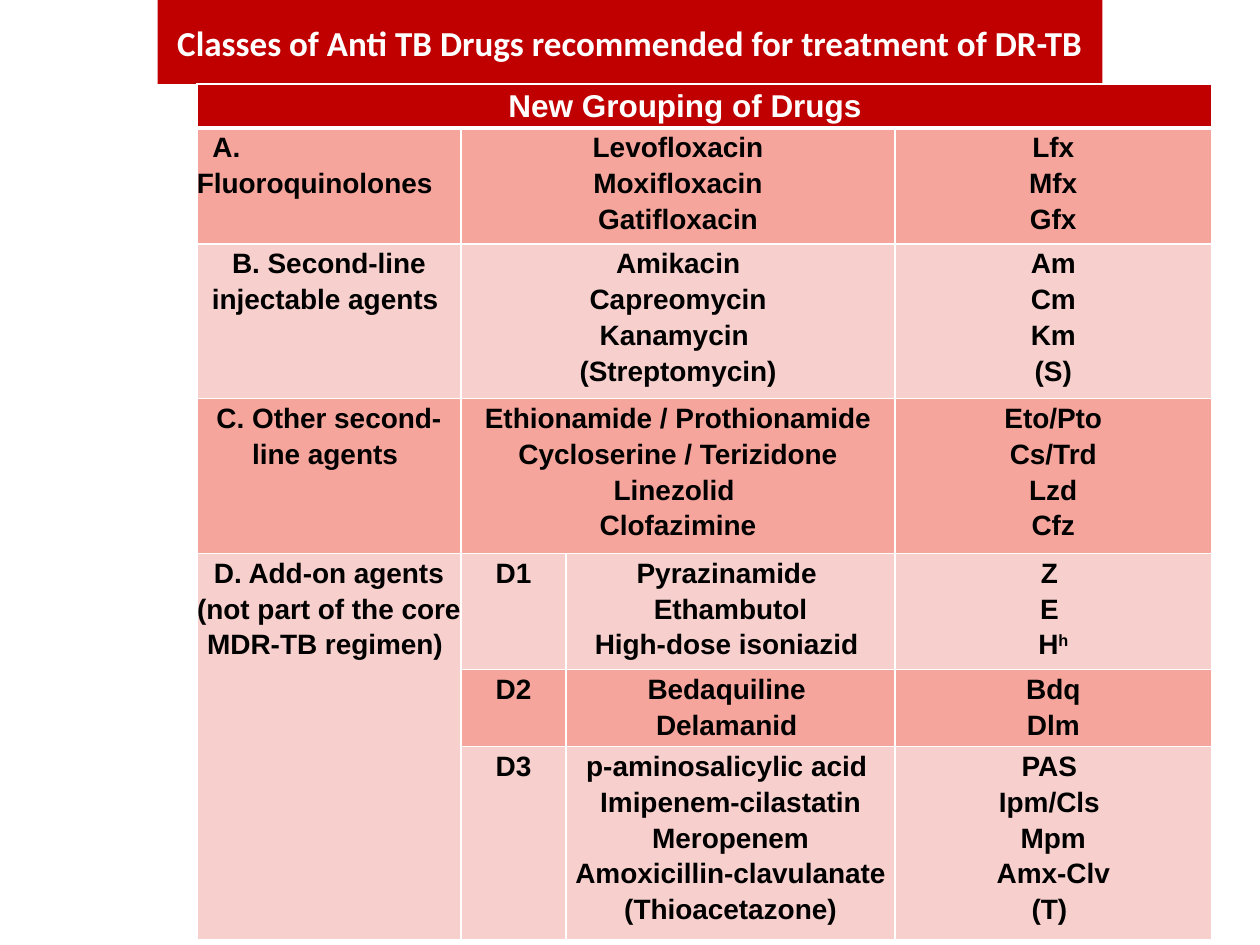
from lxml.etree import SubElement
from pptx import Presentation
from pptx.dml.color import RGBColor
from pptx.enum.text import MSO_ANCHOR, MSO_AUTO_SIZE, PP_ALIGN
from pptx.oxml.ns import qn
from pptx.util import Pt

RED, ROSE, PINK = "C00000", "F6A59C", "F7D0CD"
WHITE, BLACK = "FFFFFF", "000000"
LINE = 22.1
HEAD = 25.2
COLS = [151, 60, 188, 101]
ROWS = [
    (ROSE, 3, ["A. Fluoroquinolones"],
     ["Levofloxacin", "Moxifloxacin", "Gatifloxacin"], None,
     ["Lfx", "Mfx", "Gfx"]),
    (PINK, 4, ["B. Second-line injectable agents "],
     ["Amikacin", "Capreomycin", "Kanamycin ", "(Streptomycin)"], None,
     ["Am", "Cm", "Km", "(S)"]),
    (ROSE, 4, ["C. Other second-line agents "],
     ["Ethionamide / Prothionamide", "Cycloserine / Terizidone",
      "Linezolid ", "Clofazimine"], None,
     ["Eto/Pto", "Cs/Trd", "Lzd", "Cfz"]),
    (PINK, 3, ["D. Add-on agents (not part of the core MDR-TB regimen) "],
     ["D1"], ["Pyrazinamide ", "Ethambutol", "High-dose isoniazid "],
     ["Z ", "E ", ("H", "h")]),
    (ROSE, 2, None, ["D2"], ["Bedaquiline ", "Delamanid "], ["Bdq", "Dlm"]),
    (PINK, 5, None, ["D3"],
     ["p-aminosalicylic acid ", "Imipenem-cilastatin", "Meropenem",
      "Amoxicillin-clavulanate (Thioacetazone)"],
     ["PAS ", "Ipm/Cls ", "Mpm", "Amx-Clv", "(T) "]),
]


def paint(fill, tone):
    fill.solid()
    fill.fore_color.rgb = RGBColor.from_string(tone)


def add_run(para, text, size, tone, face="Arial"):
    run = para.add_run()
    run.text = text
    font = run.font
    font.name, font.size, font.bold = face, Pt(size), True
    font.color.rgb = RGBColor.from_string(tone)
    return run


def edge(cell, top, base):
    props = cell._tc.get_or_add_tcPr()
    for tag, width in (("L", 1), ("R", 1), ("T", top), ("B", base)):
        line = SubElement(props, qn("a:ln" + tag), w=str(Pt(width)))
        fill = SubElement(line, qn("a:solidFill"))
        SubElement(fill, qn("a:srgbClr"), val=WHITE)


def style(cell, tone, top=1, base=1):
    cell.margin_left = cell.margin_right = 0
    cell.margin_top = cell.margin_bottom = 0
    edge(cell, top, base)
    paint(cell.fill, tone)


def write(cell, lines, size=16, tone=BLACK, align=PP_ALIGN.CENTER):
    frame = cell.text_frame
    for num, line in enumerate(lines):
        para = frame.add_paragraph() if num else frame.paragraphs[0]
        para.alignment = align
        para.line_spacing = 1.15
        parts = line if isinstance(line, tuple) else (line,)
        for spot, part in enumerate(parts):
            run = add_run(para, part, size, tone)
            if spot:
                run._r.get_or_add_rPr().set("baseline", "30000")


def add_title(slide):
    title = slide.shapes.title
    title.left, title.top, title.width, title.height = Pt(90), 0, Pt(540), Pt(48)
    paint(title.fill, RED)
    frame = title.text_frame
    frame.auto_size = MSO_AUTO_SIZE.NONE
    frame.word_wrap = True
    frame.vertical_anchor = MSO_ANCHOR.MIDDLE
    para = frame.paragraphs[0]
    para.alignment = PP_ALIGN.CENTER
    add_run(para, "Classes of Anti TB Drugs recommended for treatment of DR-TB",
            20, WHITE, "Calibri")


def add_grid(slide):
    high = HEAD + LINE * sum(row[1] for row in ROWS)
    grid = slide.shapes.add_table(len(ROWS) + 1, len(COLS), Pt(112.5), Pt(48),
                                  Pt(sum(COLS)), Pt(high)).table
    grid.horz_banding = False
    for col, width in zip(grid.columns, COLS):
        col.width = Pt(width)
    grid.rows[0].height = Pt(HEAD)
    for cell in grid.rows[0].cells:
        style(cell, RED, base=3)
    head = grid.cell(0, 0)
    head.merge(grid.cell(0, 3))
    head.margin_left = Pt(178)
    write(head, ["New Grouping of Drugs"], 18, WHITE, PP_ALIGN.LEFT)
    for num, (tone, count, *texts) in enumerate(ROWS, 1):
        grid.rows[num].height = Pt(LINE * count)
        for col, lines in enumerate(texts):
            cell = grid.cell(num, col)
            style(cell, PINK if lines is None and col == 0 else tone,
                  top=3 if num == 1 else 1)
            left = num == 1 and col == 0
            write(cell, lines or [],
                  align=PP_ALIGN.LEFT if left else PP_ALIGN.CENTER)
        if texts[2] is None:
            grid.cell(num, 1).merge(grid.cell(num, 2))
    grid.cell(4, 0).merge(grid.cell(6, 0))
    first = grid.cell(1, 0).text_frame.paragraphs[0]
    first._p.get_or_add_pPr().set("indent", str(Pt(8.9)))


def main():
    deck = Presentation()
    deck.slide_width, deck.slide_height = Pt(720), Pt(540)
    slide = deck.slides.add_slide(deck.slide_layouts[5])
    paint(slide.background.fill, WHITE)
    add_title(slide)
    add_grid(slide)
    deck.save("out.pptx")


if __name__ == "__main__":
    main()
